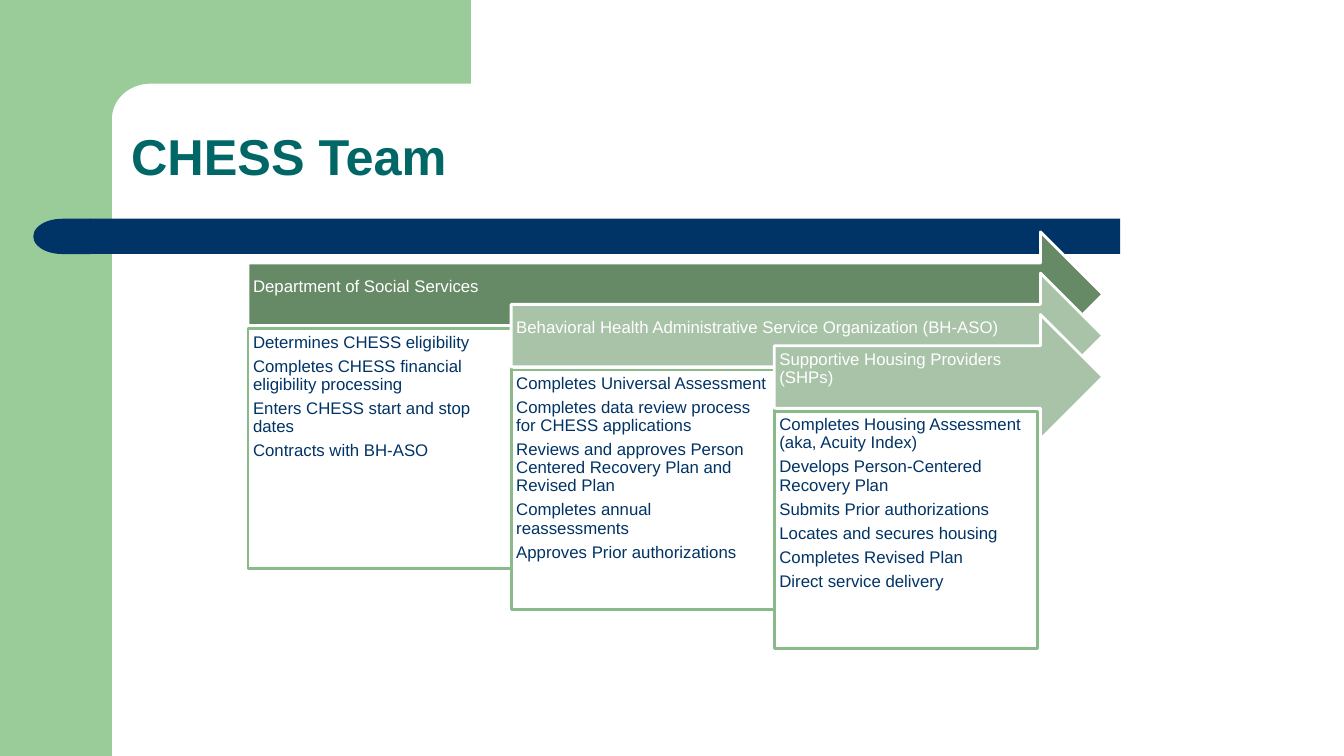
import math
from dataclasses import dataclass

import pptx
import pptx.dml.color
import pptx.enum.shapes
import pptx.enum.text
import pptx.util

SHAPE = pptx.enum.shapes.MSO_SHAPE
ANCHOR = pptx.enum.text.MSO_ANCHOR
ALIGN = pptx.enum.text.PP_ALIGN
Inches = pptx.util.Inches
Pt = pptx.util.Pt


@dataclass(frozen=True)
class Theme:
    font: str = "Arial"
    title_size: float = 36
    body_size: float = 12
    line_width: float = 2
    line_spacing: float = 0.9
    space_after: float = 4.2
    white: str = "FFFFFF"
    green: str = "99CC99"
    navy: str = "003366"
    teal: str = "006666"
    dark_sage: str = "668966"
    sage: str = "A8C3A8"
    box_line: str = "8AB98A"


@dataclass(frozen=True)
class Area:
    left: float
    top: float
    width: float
    height: float


@dataclass(frozen=True)
class Stage:
    name: str
    color: str
    duties: tuple[str, ...]
    box_height: float = 2.38


THEME = Theme()
SLIDE_W, SLIDE_H = 13.33, 7.5

# Staircase grid: each stage starts one column right and one row down.
GRID_LEFT, GRID_TOP = 2.46, 2.3
COL, ROW = 2.61, 0.41
ARROW_RIGHT, ARROW_H = 10.94, 1.24
BOX_DROP = 0.96

STAGES = (
    Stage("Department of Social Services", THEME.dark_sage, (
        "Determines CHESS eligibility",
        "Completes CHESS financial eligibility processing",
        "Enters CHESS start and stop dates",
        "Contracts with BH-ASO",
    )),
    Stage("Behavioral Health Administrative Service Organization (BH-ASO)", THEME.sage, (
        "Completes Universal Assessment",
        "Completes data review process for CHESS applications",
        "Reviews and approves Person Centered Recovery Plan and Revised Plan",
        "Completes annual reassessments",
        "Approves Prior authorizations",
    )),
    Stage("Supportive Housing Providers (SHPs)", THEME.sage, (
        "Completes Housing Assessment (aka, Acuity Index)",
        "Develops Person-Centered Recovery Plan",
        "Submits Prior authorizations",
        "Locates and secures housing",
        "Completes Revised Plan",
        "Direct service delivery",
    ), 2.35),
)


def rgb(color: str) -> pptx.dml.color.RGBColor:
    return pptx.dml.color.RGBColor.from_string(color)


def paint(sp, fill: str, line: str | None = None) -> None:
    sp.shadow.inherit = False
    sp.fill.solid()
    sp.fill.fore_color.rgb = rgb(fill)
    if line is None:
        sp.line.fill.background()
    else:
        sp.line.color.rgb = rgb(line)
        sp.line.width = Pt(THEME.line_width)


def add_shape(s, kind, area: Area, fill: str, line: str | None = None):
    sp = s.shapes.add_shape(kind, Inches(area.left), Inches(area.top),
                            Inches(area.width), Inches(area.height))
    paint(sp, fill, line)
    return sp


def format_text(tf, size: float, color: str, bold: bool = False, after: float = 0) -> None:
    tf.word_wrap = True
    for p in tf.paragraphs:
        p.alignment = ALIGN.LEFT
        p.line_spacing = THEME.line_spacing
        p.space_before = Pt(0)
        p.space_after = Pt(after)
        for r in p.runs:
            r.font.name = THEME.font
            r.font.size = Pt(size)
            r.font.bold = bold
            r.font.color.rgb = rgb(color)


def write(sp, lines: tuple[str, ...], color: str, anchor,
          right: float = 0.05, bottom: float = 0.05) -> None:
    tf = sp.text_frame
    tf.text = "\n".join(lines)
    tf.vertical_anchor = anchor
    tf.margin_left = tf.margin_top = Inches(0.05)
    tf.margin_right, tf.margin_bottom = Inches(right), Inches(bottom)
    format_text(tf, THEME.body_size, color, after=THEME.space_after)


def add_frame(s) -> None:
    """Draw the green side panel, its rounded inner corner and the navy bar."""
    side, top_right, edge = 1.11, 4.67, 0.83
    add_shape(s, SHAPE.RECTANGLE, Area(0, 0, side, SLIDE_H), THEME.green)

    radius_x, radius_y, steps = 0.38, 0.35, 16
    angles = [math.pi / 2 * i / steps for i in range(steps + 1)]
    corner = [(side + radius_x * (1 - math.sin(a)), edge + radius_y * (1 - math.cos(a)))
              for a in angles]
    outline = [(top_right, edge), *corner, (side, 1.28), (0.67, 1.28), (0.67, 0)]
    builder = s.shapes.build_freeform(Inches(top_right), 0)
    builder.add_line_segments([(Inches(x), Inches(y)) for x, y in outline])
    paint(builder.convert_to_shape(), THEME.green)

    add_shape(s, SHAPE.RECTANGLE, Area(0.89, 2.17, 10.22, 0.35), THEME.navy)
    cap = add_shape(s, SHAPE.FLOWCHART_DELAY, Area(0.33, 2.17, 0.57, 0.35), THEME.navy)
    cap.rotation = 180


def set_title(s, text: str) -> None:
    title = s.shapes.title
    title.left, title.top = Inches(1.2), Inches(0.31)
    title.width, title.height = Inches(11), Inches(1.59)
    tf = title.text_frame
    tf.text = text
    tf.auto_size = pptx.enum.text.MSO_AUTO_SIZE.NONE
    tf.vertical_anchor = ANCHOR.BOTTOM
    format_text(tf, THEME.title_size, THEME.teal, bold=True)


def add_stage(s, index: int, stage: Stage) -> None:
    left, top = GRID_LEFT + index * COL, GRID_TOP + index * ROW
    arrow = add_shape(s, SHAPE.RIGHT_ARROW, Area(left, top, ARROW_RIGHT - left, ARROW_H),
                      stage.color, THEME.white)
    write(arrow, (stage.name,), THEME.white, ANCHOR.MIDDLE, right=0.28, bottom=0.2)
    box = add_shape(s, SHAPE.RECTANGLE, Area(left, top + BOX_DROP, COL, stage.box_height),
                    THEME.white, THEME.box_line)
    write(box, stage.duties, THEME.navy, ANCHOR.TOP)


def main() -> None:
    prs = pptx.Presentation()
    prs.slide_width, prs.slide_height = Inches(SLIDE_W), Inches(SLIDE_H)
    s = prs.slides.add_slide(prs.slide_layouts.get_by_name("Title Only"))
    add_frame(s)
    set_title(s, "CHESS Team")
    for index, stage in enumerate(STAGES):
        add_stage(s, index, stage)
    prs.save("out.pptx")


if __name__ == "__main__":
    main()
